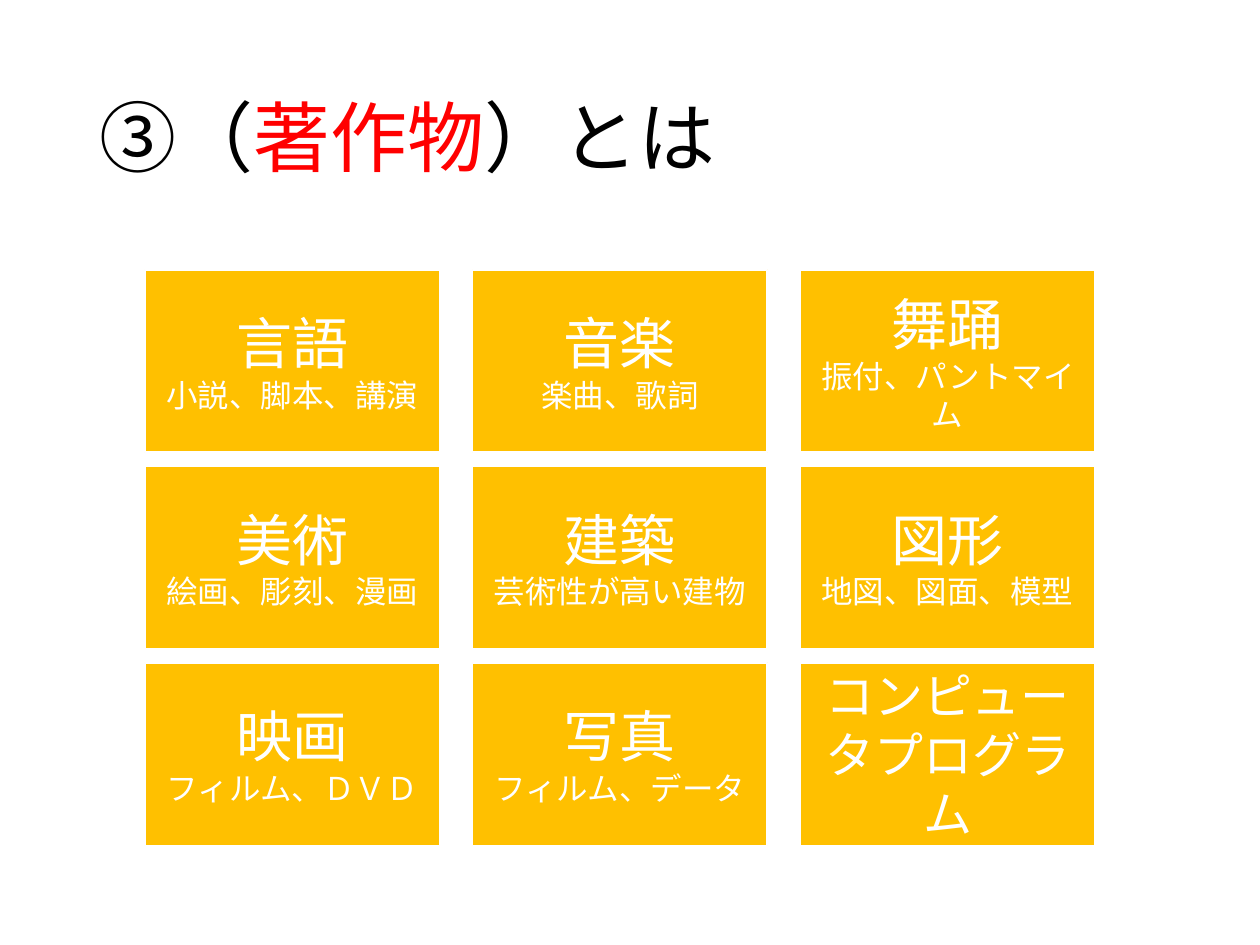
from pptx import Presentation
from pptx.dml.color import RGBColor
from pptx.enum import shapes, text
from pptx.util import Inches, Pt

BLACK = RGBColor(0x00, 0x00, 0x00)
RED = RGBColor(0xFF, 0x00, 0x00)
WHITE = RGBColor(0xFF, 0xFF, 0xFF)
AMBER = RGBColor(0xFF, 0xC0, 0x00)
FONT = "Calibri"

# Each work category: name, name size, examples
CATEGORIES = [
    [("言語", 32, "小説、脚本、講演"),
     ("音楽", 32, "楽曲、歌詞"),
     ("舞踊", 32, "振付、パントマイム")],
    [("美術", 32, "絵画、彫刻、漫画"),
     ("建築", 32, "芸術性が高い建物"),
     ("図形", 32, "地図、図面、模型")],
    [("映画", 32, "フィルム、ＤＶＤ"),
     ("写真", 32, "フィルム、データ"),
     ("コンピュータプログラム", 28, None)],
]
LEFT, TOP = 1.15, 2.14
WIDTH, HEIGHT = 2.34, 1.45
COLUMN_STEP, ROW_STEP = 2.6, 1.56


def add_run(paragraph, words, size, color):
    run = paragraph.add_run()
    run.text = words
    run.font.name = FONT
    run.font.size = Pt(size)
    run.font.color.rgb = color


prs = Presentation()
prs.slide_width, prs.slide_height = Inches(10), Inches(7.5)
slide = prs.slides.add_slide(prs.slide_layouts[5])

title = slide.shapes.title
title.left, title.top = Inches(0.69), Inches(0.4)
title.width, title.height = Inches(8.62), Inches(1.45)
title.text_frame.vertical_anchor = text.MSO_ANCHOR.MIDDLE
heading = title.text_frame.paragraphs[0]
heading.alignment = text.PP_ALIGN.LEFT
heading.line_spacing = 0.9
for words, color in [("③（", BLACK), ("著作物", RED), ("）とは", BLACK)]:
    add_run(heading, words, 44, color)

for row, categories in enumerate(CATEGORIES):
    for column, (name, name_size, examples) in enumerate(categories):
        card = slide.shapes.add_shape(
            shapes.MSO_SHAPE.RECTANGLE,
            Inches(LEFT + column * COLUMN_STEP), Inches(TOP + row * ROW_STEP),
            Inches(WIDTH), Inches(HEIGHT))
        card.shadow.inherit = False
        card.fill.solid()
        card.fill.fore_color.rgb = AMBER
        card.line.color.rgb = WHITE
        card.line.width = Pt(1)

        frame = card.text_frame
        frame.word_wrap = True
        frame.vertical_anchor = text.MSO_ANCHOR.MIDDLE
        label = frame.paragraphs[0]
        label.alignment = text.PP_ALIGN.CENTER
        add_run(label, name, name_size, WHITE)
        if examples:
            detail = frame.add_paragraph()
            detail.alignment = text.PP_ALIGN.CENTER
            add_run(detail, examples, 18, WHITE)

prs.save("out.pptx")
